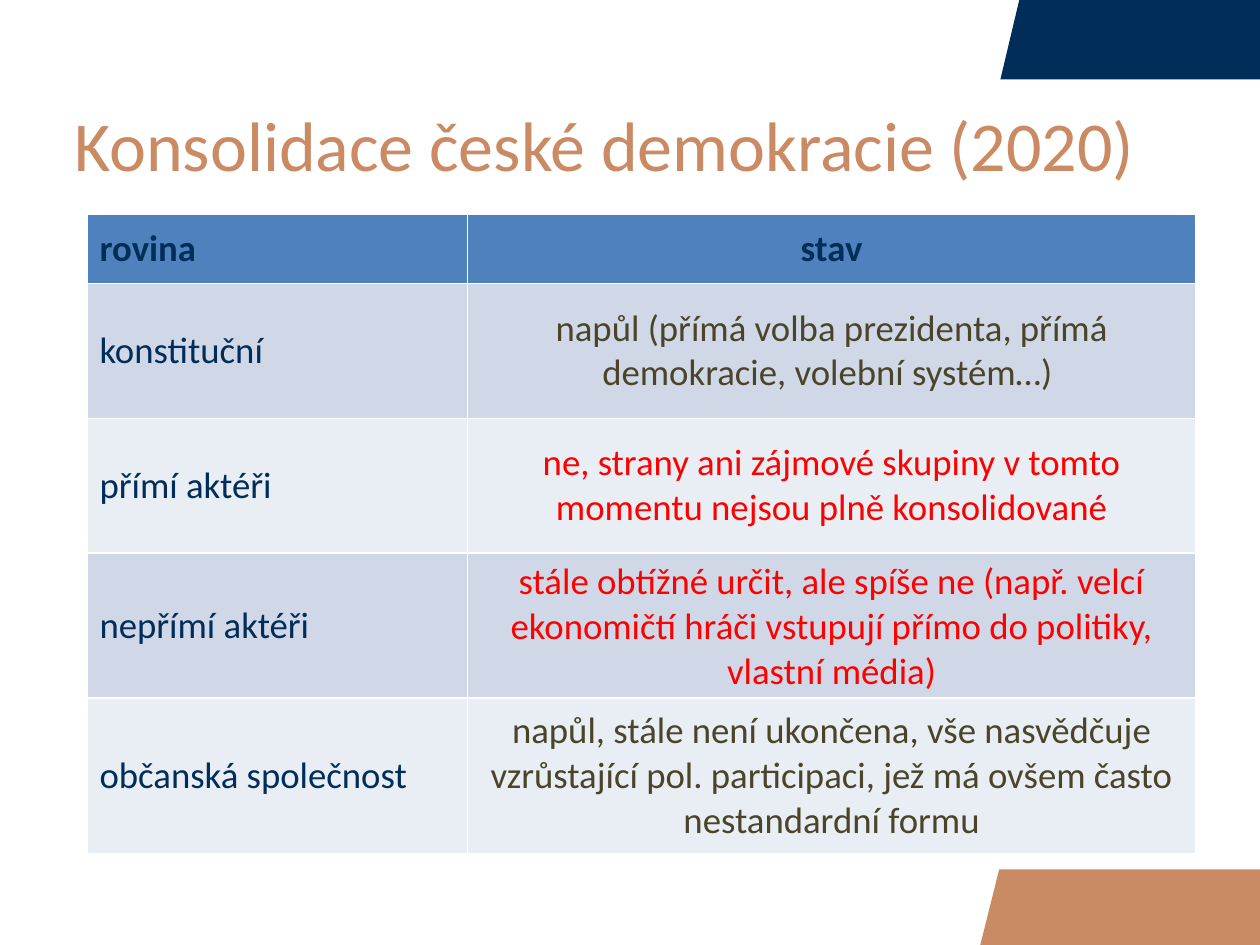
from pptx import Presentation
from pptx.dml.color import RGBColor
from pptx.enum.text import MSO_ANCHOR, PP_ALIGN
from pptx.util import Inches, Pt

LEFT, CENTER = PP_ALIGN.LEFT, PP_ALIGN.CENTER
MIDDLE = MSO_ANCHOR.MIDDLE

COLORS = {
    "navy": "002D5A", "copper": "CA8A64", "header": "4F81BD",
    "band_dark": "D0D8E8", "band_light": "E9EDF4",
    "olive": "4A452A", "red": "FF0000",
}
TITLE = "Konsolidace české demokracie (2020)"
ROWS = [
    ("rovina", "stav", "navy", 0.55),
    ("konstituční", "napůl (přímá volba prezidenta, přímá demokracie, volební systém…) ", "olive", 1.07),
    ("přímí aktéři", "ne, strany ani zájmové skupiny v tomto momentu nejsou plně konsolidované", "red", 1.07),
    ("nepřímí aktéři", "stále obtížné určit, ale spíše ne (např. velcí ekonomičtí hráči vstupují "
     "přímo do politiky, vlastní média)", "red", 1.07),
    ("občanská společnost", "napůl, stále není ukončena, vše nasvědčuje vzrůstající pol. participaci, "
     "jež má ovšem často nestandardní formu", "olive", 1.24),
]
COL_WIDTHS = [3.02, 5.78]
CORNERS = [
    ("navy", [(7.94, 0.63), (8.09, 0), (10, 0), (10, 0.63)]),
    ("copper", [(7.78, 7.5), (7.93, 6.9), (10, 6.9), (10, 7.5)]),
]


def rgb(name):
    return RGBColor.from_string(COLORS[name])


def write(tf, text, color, size, align=LEFT, bold=False):
    p = tf.paragraphs[0]
    p.alignment = align
    r = p.add_run()
    r.text = text
    for key, value in {"name": "Calibri", "size": Pt(size), "bold": bold}.items():
        setattr(r.font, key, value)
    r.font.color.rgb = rgb(color)


def add_corner(s, color, points):
    start, *rest = [(Inches(x), Inches(y)) for x, y in points]
    builder = s.shapes.build_freeform(*start)
    builder.add_line_segments(rest, close=True)
    sp = builder.convert_to_shape()
    sp.shadow.inherit = False
    sp.fill.solid()
    sp.fill.fore_color.rgb = rgb(color)
    sp.line.fill.background()


def add_title(s):
    tf = s.shapes.add_textbox(Inches(0.31), Inches(0.92), Inches(9.24), Inches(0.44)).text_frame
    frame = {"word_wrap": True, "vertical_anchor": MIDDLE,
             "margin_left": Inches(0.28), "margin_right": Inches(0.28)}
    for key, value in frame.items():
        setattr(tf, key, value)
    write(tf, TITLE, "copper", 40)


def add_levels_table(s):
    height = sum(row[-1] for row in ROWS)
    table = s.shapes.add_table(len(ROWS), len(COL_WIDTHS), Inches(0.69), Inches(1.7),
                               Inches(sum(COL_WIDTHS)), Inches(height)).table
    for column, width in zip(table.columns, COL_WIDTHS):
        column.width = Inches(width)
    for i, (level, state, state_color, row_height) in enumerate(ROWS):
        table.rows[i].height = Inches(row_height)
        band = "header" if i == 0 else "band_dark" if i % 2 else "band_light"
        for j, (text, color, align) in enumerate([(level, "navy", LEFT), (state, state_color, CENTER)]):
            cell = table.cell(i, j)
            cell.vertical_anchor = MIDDLE
            cell.fill.solid()
            cell.fill.fore_color.rgb = rgb(band)
            write(cell.text_frame, text, color, 21, align, bold=i == 0)


def main():
    prs = Presentation()
    prs.slide_width, prs.slide_height = Inches(10), Inches(7.5)
    s = prs.slides.add_slide(prs.slide_layouts[6])
    for color, points in CORNERS:
        add_corner(s, color, points)
    add_title(s)
    add_levels_table(s)
    prs.save("out.pptx")


if __name__ == "__main__":
    main()
